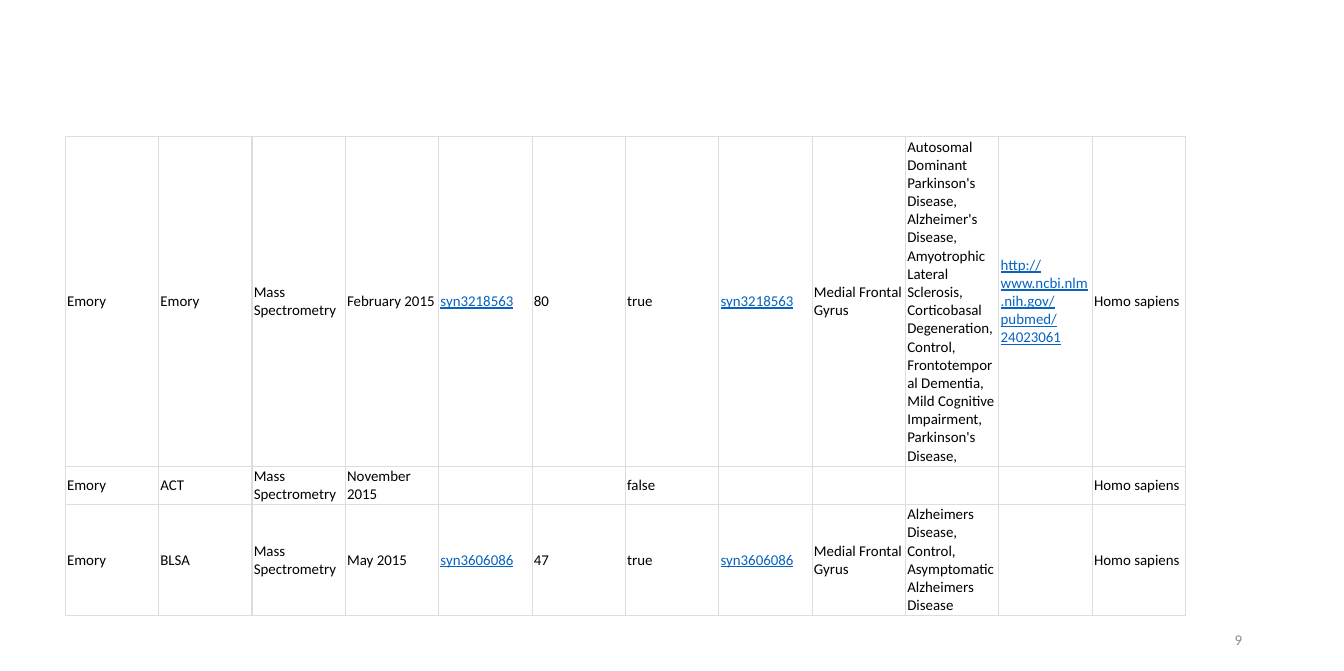
from dataclasses import dataclass

from lxml import etree
from pptx import Presentation
from pptx.dml.color import RGBColor
from pptx.enum import text as t
from pptx.oxml import ns
from pptx.util import Inches, Pt

COLORS = {"paper": "FFFFFF", "ink": "000000", "link": "0563C1",
          "grid": "DDDDDD", "page": "8C8C8C"}
FONT = "Calibri"
LEFT, TOP, WIDTH = 0.73, 1.53, 12.53


@dataclass
class Dataset:
    """One row of the table of proteomics data sets."""
    height: float
    study: str
    release: str
    synapse_id: str = ""
    samples: str = ""
    available: str = "true"
    region: str = ""
    diagnoses: str = ""
    publication: str = ""

    def entries(self) -> list[str]:
        return ["Emory", self.study, "Mass Spectrometry", self.release,
                self.synapse_id, self.samples, self.available, self.synapse_id,
                self.region, self.diagnoses, self.publication, "Homo sapiens"]


DATASETS = [
    Dataset(3.68, "Emory", "February 2015", "syn3218563", "80",
            region="Medial Frontal Gyrus",
            diagnoses="Autosomal Dominant Parkinson's Disease, Alzheimer's Disease, "
                      "Amyotrophic Lateral Sclerosis, Corticobasal Degeneration, "
                      "Control, Frontotemporal Dementia, Mild Cognitive Impairment, "
                      "Parkinson's Disease,",
            publication="http://www.ncbi.nlm.nih.gov/pubmed/24023061"),
    Dataset(0.43, "ACT", "November 2015", available="false"),
    Dataset(1.24, "BLSA", "May 2015", "syn3606086", "47",
            region="Medial Frontal Gyrus",
            diagnoses="Alzheimers Disease, Control, Asymptomatic Alzheimers Disease"),
]


def color(name: str) -> RGBColor:
    return RGBColor.from_string(COLORS[name])


def set_font(paragraph, color_name: str) -> None:
    paragraph.font.name = FONT
    paragraph.font.size = Pt(12)
    paragraph.font.color.rgb = color(color_name)


def add_borders(cell) -> None:
    """Draw all four edges; they must come before the fill in the cell."""
    properties = cell._tc.get_or_add_tcPr()
    for position, edge in enumerate(("lnL", "lnR", "lnT", "lnB")):
        line = etree.Element(ns.qn(f"a:{edge}"), w=str(Pt(1)))
        fill = etree.SubElement(line, ns.qn("a:solidFill"))
        etree.SubElement(fill, ns.qn("a:srgbClr"), val=COLORS["grid"])
        properties.insert(position, line)


def fill_cell(cell, entry: str) -> None:
    cell.fill.solid()
    cell.fill.fore_color.rgb = color("paper")
    cell.vertical_anchor = t.MSO_ANCHOR.MIDDLE
    cell.margin_left = cell.margin_right = Inches(0.02)
    cell.margin_top = cell.margin_bottom = Inches(0.01)
    add_borders(cell)
    cell.text = entry
    paragraph = cell.text_frame.paragraphs[0]
    is_link = entry.startswith(("syn", "http"))
    set_font(paragraph, "link" if is_link else "ink")
    if is_link:
        paragraph.font.underline = True


def add_datasets(slide, datasets: list[Dataset]) -> None:
    column_count = len(datasets[0].entries())
    height = sum(dataset.height for dataset in datasets)
    table = slide.shapes.add_table(
        len(datasets), column_count, Inches(LEFT), Inches(TOP),
        Inches(WIDTH), Inches(height)).table
    table.first_row = table.horz_banding = False
    for column in table.columns:
        column.width = Inches(WIDTH / column_count)
    for row, dataset in zip(table.rows, datasets):
        row.height = Inches(dataset.height)
        for cell, entry in zip(row.cells, dataset.entries()):
            fill_cell(cell, entry)


def add_page_number(slide, number: str) -> None:
    frame = slide.shapes.add_textbox(
        Inches(10.61), Inches(6.95), Inches(3.38), Inches(0.4)).text_frame
    frame.word_wrap = True
    frame.vertical_anchor = t.MSO_ANCHOR.MIDDLE
    frame.text = number
    paragraph = frame.paragraphs[0]
    paragraph.alignment = t.PP_ALIGN.RIGHT
    set_font(paragraph, "page")


def main() -> None:
    deck = Presentation()
    deck.slide_width, deck.slide_height = Inches(15.03), Inches(7.5)
    slide = deck.slides.add_slide(deck.slide_layouts[6])  # blank: no title here
    add_datasets(slide, DATASETS)
    add_page_number(slide, "9")
    deck.save("out.pptx")


if __name__ == "__main__":
    main()
